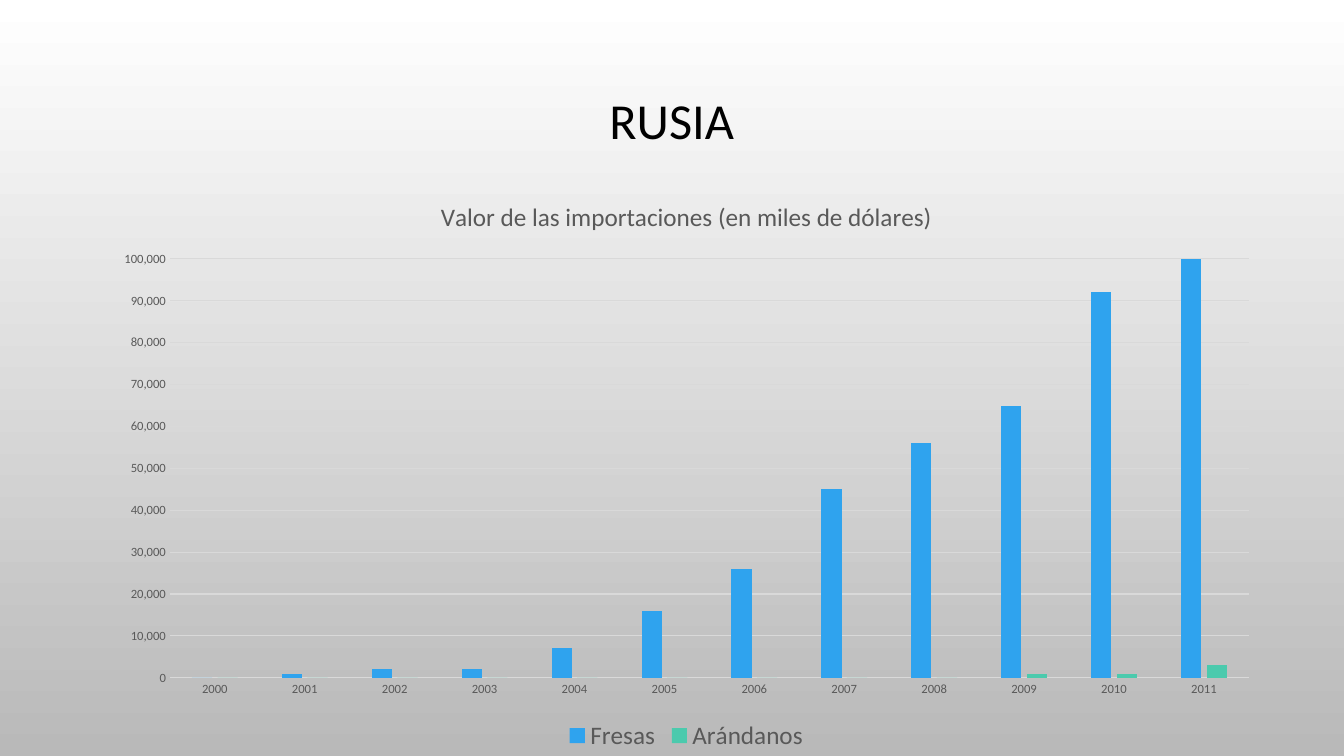
from pptx import Presentation
from pptx.chart.data import CategoryChartData
from pptx.dml.color import RGBColor
from pptx.enum.chart import XL_CHART_TYPE as CT, XL_LEGEND_POSITION as LP, XL_TICK_MARK as TM
from pptx.enum.text import MSO_ANCHOR, PP_ALIGN
from pptx.oxml import parse_xml
from pptx.oxml.ns import nsdecls
from pptx.util import Cm, Pt

COLORS = {"top": "FFFFFF", "bottom": "B9B9B9", "title": "000000", "text": "595959",
          "grid": "D9D9D9", "Fresas": "2FA3EE", "Arándanos": "4BCAAD"}
IMPORTS = {
    "Fresas": [0, 1000, 2000, 2000, 7000, 16000, 26000, 45000, 56000, 65000, 92000, 101000],
    "Arándanos": [0, 0, 0, 0, 0, 0, 0, 0, 0, 1000, 1000, 3000],
}


def rgb(name):
    return RGBColor.from_string(COLORS[name])


def set_layout(el, index, target="", **percents):
    """Place a chart part by hand, in percent of the chart."""
    for old in el.findall("{*}layout"):
        el.remove(old)
    tags = "".join(f'<c:{tag} val="{pct / 100:.4f}"/>' for tag, pct in percents.items())
    el.insert(index, parse_xml(
        f'<c:layout {nsdecls("c")}><c:manualLayout>{target}'
        f'<c:xMode val="edge"/><c:yMode val="edge"/>{tags}</c:manualLayout></c:layout>'))


prs = Presentation()
prs.slide_width, prs.slide_height = Cm(33.87), Cm(19.05)
s = prs.slides.add_slide(prs.slide_layouts[5])

# Background gradient
fill = s.background.fill
fill.gradient()
fill.gradient_angle = 270
for stop, name in zip(fill.gradient_stops, ("top", "bottom")):
    stop.color.rgb = rgb(name)

# Title
title = s.shapes.title
title.left, title.top, title.width, title.height = Cm(2.54), Cm(1.73), Cm(28.78), Cm(2.74)
tf = title.text_frame
tf.text = "RUSIA"
tf.vertical_anchor = MSO_ANCHOR.MIDDLE
p = tf.paragraphs[0]
p.alignment, p.line_spacing = PP_ALIGN.CENTER, 0.9

# Chart
data = CategoryChartData(number_format="#,##0")
data.categories = [str(year) for year in range(2000, 2012)]
for name, values in IMPORTS.items():
    data.add_series(name, values)
chart = s.shapes.add_chart(CT.COLUMN_CLUSTERED, Cm(2.54), Cm(4.47), Cm(29.51), Cm(14.58), data).chart
plot = chart.plots[0]
plot.gap_width, plot.overlap, plot.vary_by_categories = 219, -27, False
for series in plot.series:
    series.format.fill.solid()
    series.format.fill.fore_color.rgb = rgb(series.name)
    series.invert_if_negative = False

# Chart title and legend
chart.has_title = True
chart_tf = chart.chart_title.text_frame
chart_tf.text = "Valor de las importaciones (en miles de dólares)"
chart.chart_title.include_in_layout = False
chart.has_legend = True
chart.legend.position = LP.BOTTOM
chart.legend.include_in_layout = False

# Axes
cat, val = chart.category_axis, chart.value_axis
for axis in (cat, val):
    axis.major_tick_mark = axis.minor_tick_mark = TM.NONE
val.minimum_scale, val.maximum_scale, val.major_unit = 0, 100000, 10000
val.tick_labels.number_format = "#,##0"
val.tick_labels.number_format_is_linked = False
val.format.line.fill.background()
val.has_major_gridlines = True
for line in (cat.format.line, val.major_gridlines.format.line):
    line.color.rgb, line.width = rgb("grid"), Pt(0.75)

# Fonts
for font, size, color in (
    (p.runs[0].font, 36, "title"),
    (chart.font, 10, "title"),
    (chart_tf.paragraphs[0].runs[0].font, 18, "text"),
    (chart.legend.font, 18, "text"),
    (cat.tick_labels.font, 9, "text"),
    (val.tick_labels.font, 9, "text"),
):
    for attr, value in {"name": "Calibri", "size": Pt(size), "bold": False}.items():
        setattr(font, attr, value)
    font.color.rgb = rgb(color)

# Places of the chart title and the plot area
set_layout(chart.chart_title._element, 1, x=28.65, y=3)
set_layout(chart._chartSpace.chart.plotArea, 0, '<c:layoutTarget val="inner"/>',
           x=5.9, y=14.1, w=92.15, h=72.4)

prs.save("out.pptx")
